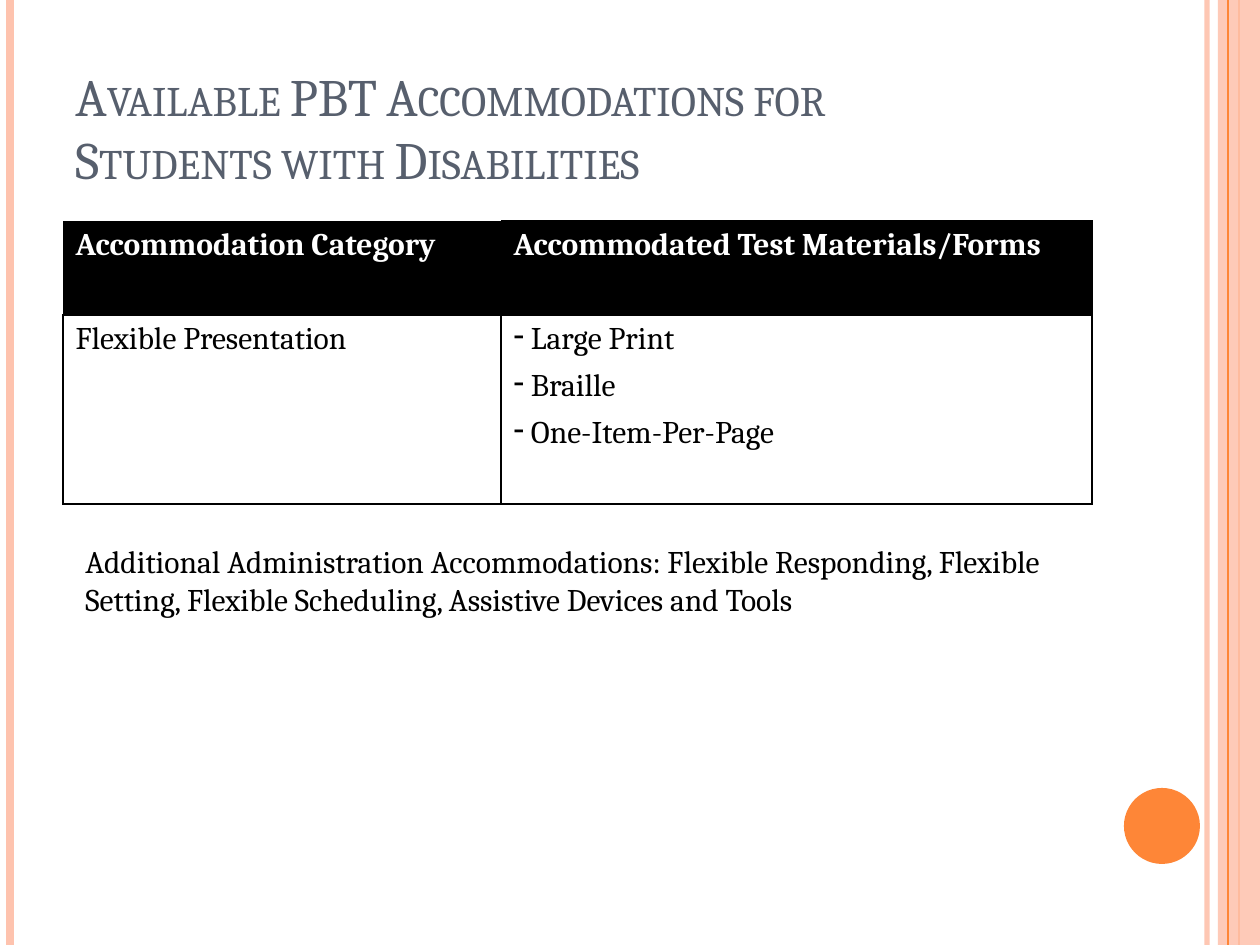
"""Builds a slide on paper-based test accommodations with a two-column table."""

from dataclasses import dataclass

from lxml.etree import SubElement
from pptx import Presentation
from pptx.dml.color import RGBColor
from pptx.enum.shapes import MSO_CONNECTOR as Connector
from pptx.enum.shapes import MSO_SHAPE as Preset
from pptx.enum.text import MSO_ANCHOR as Anchor
from pptx.oxml.ns import qn
from pptx.util import Emu, Pt

PAGE_WIDTH, PAGE_HEIGHT = 1260, 945
EMU_PER_INCH, PX_PER_INCH = 914400, 126
FONT = "Cambria"
ORANGE = RGBColor(0xFE, 0x86, 0x37)
PEACH = RGBColor(0xFE, 0xC3, 0xAE)
SLATE = RGBColor(0x57, 0x5F, 0x6D)
BLACK = RGBColor(0x00, 0x00, 0x00)
WHITE = RGBColor(0xFF, 0xFF, 0xFF)


@dataclass(frozen=True)
class Frame:
    left: int
    top: int
    width: int
    height: int

    def emu(self) -> tuple:
        return tuple(map(px, (self.left, self.top, self.width, self.height)))


@dataclass(frozen=True)
class Rail:
    x: int
    color: RGBColor
    weight: float
    opacity: int = 100


@dataclass(frozen=True)
class CellSpec:
    lines: tuple
    ink: RGBColor
    fill: RGBColor
    borders: str
    bold: bool = False
    bullet: str = ""


RAILS_BEHIND = (
    Rail(1207, PEACH, 3, 93),
    Rail(10, PEACH, 4.5),
    Rail(1239, ORANGE, 1.5),
)
RAIL_ABOVE = Rail(1228, ORANGE, 0.75)
BAND = Frame(1218, 0, 42, PAGE_HEIGHT)
DOT = Frame(1124, 788, 76, 76)
TITLE = Frame(63, 38, 1029, 158)
TABLE = Frame(63, 221, 1029, 283)
NOTE = Frame(73, 536, 1040, 89)
COLUMN_WIDTHS = (438, 591)
ROW_HEIGHTS = (94, 189)
TITLE_TEXT = "Available PBT Accommodations for \vStudents with Disabilities"
NOTE_TEXT = (
    "Additional Administration Accommodations: Flexible Responding, Flexible "
    "Setting, Flexible Scheduling, Assistive Devices and Tools"
)
CELLS = (
    (
        CellSpec(("Accommodation Category",), WHITE, BLACK, "B", bold=True),
        CellSpec(("Accommodated Test Materials/Forms",), WHITE, BLACK, "RTB", bold=True),
    ),
    (
        CellSpec(("Flexible Presentation",), BLACK, WHITE, "LRTB"),
        CellSpec((" Large Print", " Braille", " One-Item-Per-Page"),
                 BLACK, WHITE, "LRTB", bullet="-"),
    ),
)


def px(length: int) -> Emu:
    return Emu(round(length * EMU_PER_INCH / PX_PER_INCH))


def set_opacity(element, percent: int) -> None:
    color = next(element.iter(qn("a:srgbClr")))
    SubElement(color, qn("a:alpha")).set("val", str(percent * 1000))


def format_font(font, color: RGBColor, **values) -> None:
    for name, value in {"name": FONT, **values}.items():
        setattr(font, name, value)
    font.color.rgb = color


def add_rail(page, rail: Rail) -> None:
    line = page.shapes.add_connector(
        Connector.STRAIGHT, px(rail.x), 0, px(rail.x), px(PAGE_HEIGHT))
    line.line.color.rgb = rail.color
    line.line.width = Pt(rail.weight)
    properties = line._element.spPr
    if rail.opacity < 100:
        set_opacity(properties, rail.opacity)
    SubElement(properties, qn("a:effectLst"))


def add_solid(page, preset: Preset, frame: Frame, color: RGBColor, opacity: int = 100) -> None:
    shape = page.shapes.add_shape(preset, *frame.emu())
    shape.shadow.inherit = False
    shape.fill.solid()
    shape.fill.fore_color.rgb = color
    shape.line.fill.background()
    if opacity < 100:
        set_opacity(shape._element.spPr, opacity)


def add_text(page, frame: Frame, text: str, size: int, color: RGBColor,
             anchor: Anchor = Anchor.TOP, small_caps: bool = False) -> None:
    text_frame = page.shapes.add_textbox(*frame.emu()).text_frame
    for name, value in {"word_wrap": True, "vertical_anchor": anchor, "text": text}.items():
        setattr(text_frame, name, value)
    for span in text_frame.paragraphs[0].runs:
        format_font(span.font, color, size=Pt(size))
        if small_caps:
            span._r.get_or_add_rPr().set("cap", "small")


def set_borders(cell, sides: str) -> None:
    properties = cell._tc.get_or_add_tcPr()
    for index, side in enumerate("LRTB"):
        border = properties.makeelement(qn(f"a:ln{side}"), {"w": str(Pt(1))})
        if side in sides:
            fill = SubElement(border, qn("a:solidFill"))
            SubElement(fill, qn("a:srgbClr")).set("val", str(BLACK))
        else:
            SubElement(border, qn("a:noFill"))
        properties.insert(index, border)


def set_bullet(para, character: str) -> None:
    para.space_after = Pt(6)
    properties = para._p.get_or_add_pPr()
    properties.set("marL", "0")
    properties.set("indent", "0")
    SubElement(properties, qn("a:buChar")).set("char", character)


def fill_cell(cell, spec: CellSpec) -> None:
    cell.fill.solid()
    cell.fill.fore_color.rgb = spec.fill
    set_borders(cell, spec.borders)
    cell.text_frame.text = "\n".join(spec.lines)
    for para in cell.text_frame.paragraphs:
        if spec.bullet:
            set_bullet(para, spec.bullet)
        for span in para.runs:
            format_font(span.font, spec.ink, size=Pt(18), bold=spec.bold)


def add_accommodations(page) -> None:
    table = page.shapes.add_table(
        len(ROW_HEIGHTS), len(COLUMN_WIDTHS), *TABLE.emu()).table
    for name, value in {"first_row": False, "horz_banding": False}.items():
        setattr(table, name, value)
    for column, width in zip(table.columns, COLUMN_WIDTHS):
        column.width = px(width)
    for row, height, specs in zip(table.rows, ROW_HEIGHTS, CELLS):
        row.height = px(height)
        for cell, spec in zip(row.cells, specs):
            fill_cell(cell, spec)


def main() -> None:
    deck = Presentation()
    deck.slide_width, deck.slide_height = px(PAGE_WIDTH), px(PAGE_HEIGHT)
    page = deck.slides.add_slide(deck.slide_layouts[6])
    for rail in RAILS_BEHIND:
        add_rail(page, rail)
    add_solid(page, Preset.RECTANGLE, BAND, PEACH, opacity=87)
    add_rail(page, RAIL_ABOVE)
    add_solid(page, Preset.OVAL, DOT, ORANGE)
    add_text(page, TITLE, TITLE_TEXT, 30, SLATE, Anchor.BOTTOM, small_caps=True)
    add_accommodations(page)
    add_text(page, NOTE, NOTE_TEXT, 18, BLACK)
    deck.save("out.pptx")


if __name__ == "__main__":
    main()
